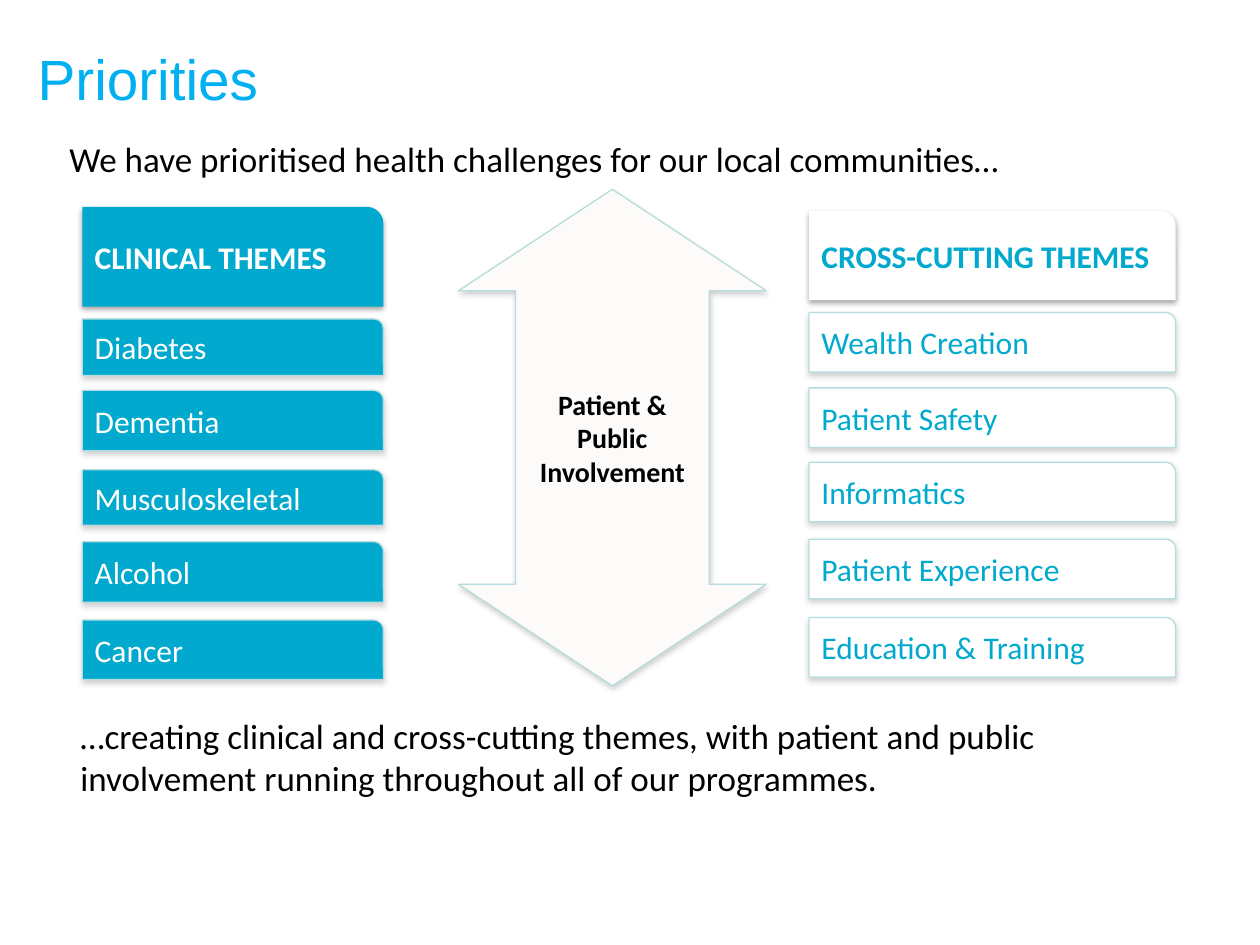
from dataclasses import dataclass

import pptx
import pptx.dml.color
import pptx.enum.shapes
import pptx.enum.text
import pptx.oxml
import pptx.oxml.ns
import pptx.util
from pptx.util import Cm

SHAPES = pptx.enum.shapes.MSO_SHAPE
ALIGN = pptx.enum.text.PP_ALIGN
ANCHOR = pptx.enum.text.MSO_ANCHOR


@dataclass(frozen=True)
class Theme:
    title_color: str = "00B0F0"
    teal: str = "00A9CD"
    white: str = "FFFFFF"
    black: str = "000000"
    arrow_fill: str = "FCFBF9"
    outline: str = "B6DCDF"
    bar_shadow: str = "808080"
    heading_shadow: str = "000000"
    title_font: str = "Arial"
    body_font: str = "Calibri"
    title_size: float = 32.4
    body_size: float = 20
    bar_size: float = 18
    arrow_size: float = 16


@dataclass(frozen=True)
class Bar:
    text: str
    top: float
    height: float


@dataclass(frozen=True)
class Column:
    left: float
    width: float
    fill: str
    color: str
    heading: Bar
    bars: tuple[Bar, ...]


THEME = Theme()

# Bar positions and sizes in centimetres
COLUMNS = (
    Column(1.66, 6.07, THEME.teal, THEME.white,
           Bar("CLINICAL THEMES", 4.17, 2.01),
           (Bar("Diabetes", 6.43, 1.14),
            Bar("Dementia", 7.87, 1.22),
            Bar("Musculoskeletal", 9.47, 1.12),
            Bar("Alcohol", 10.92, 1.22),
            Bar("Cancer", 12.5, 1.2))),
    Column(16.31, 7.39, THEME.white, THEME.teal,
           Bar("CROSS-CUTTING THEMES", 4.25, 1.8),
           (Bar("Wealth Creation", 6.3, 1.2),
            Bar("Patient Safety", 7.82, 1.2),
            Bar("Informatics", 9.32, 1.2),
            Bar("Patient Experience", 10.87, 1.2),
            Bar("Education & Training", 12.45, 1.2))),
)


def rgb(value: str) -> pptx.dml.color.RGBColor:
    return pptx.dml.color.RGBColor.from_string(value)


def write_text(box, text: str, *, size: float, color: str,
               font: str = THEME.body_font, bold: bool = False,
               align=ALIGN.LEFT, anchor=ANCHOR.MIDDLE) -> None:
    frame = box.text_frame
    frame.word_wrap = True
    frame.vertical_anchor = anchor
    para = frame.paragraphs[0]
    para.alignment = align
    span = para.add_run()
    span.text = text
    span.font.name = font
    span.font.size = pptx.util.Pt(size)
    span.font.bold = bold
    span.font.color.rgb = rgb(color)


def add_text(page, left: float, top: float, width: float, height: float,
             text: str, **text_format) -> None:
    box = page.shapes.add_textbox(Cm(left), Cm(top), Cm(width), Cm(height))
    write_text(box, text, **text_format)


def cast_shadow(shape, color: str) -> None:
    shape.shadow.inherit = False
    effects = shape._element.spPr.find(pptx.oxml.ns.qn("a:effectLst"))
    effects.append(pptx.oxml.parse_xml(
        f'<a:outerShdw {pptx.oxml.ns.nsdecls("a")} blurRad="{Cm(0.11)}" '
        f'dist="{Cm(0.06)}" dir="5400000" rotWithShape="0">'
        f'<a:srgbClr val="{color}"><a:alpha val="35000"/></a:srgbClr>'
        '</a:outerShdw>'))


def add_block(page, kind, left: float, top: float, width: float,
              height: float, *, fill: str, shadow: str,
              outline: str | None = None):
    shape = page.shapes.add_shape(kind, Cm(left), Cm(top), Cm(width), Cm(height))
    shape.fill.solid()
    shape.fill.fore_color.rgb = rgb(fill)
    if outline:
        shape.line.color.rgb = rgb(outline)
        shape.line.width = pptx.util.Pt(0.75)
    else:
        shape.line.fill.background()
    cast_shadow(shape, shadow)
    return shape


def add_bar(page, column: Column, bar: Bar, *, heading: bool = False) -> None:
    shape = add_block(
        page, SHAPES.ROUND_1_RECTANGLE, column.left, bar.top, column.width,
        bar.height, fill=column.fill,
        shadow=THEME.heading_shadow if heading else THEME.bar_shadow,
        outline=None if heading else THEME.outline)
    write_text(shape, bar.text, size=THEME.bar_size, color=column.color,
               bold=heading)


def add_column(page, column: Column) -> None:
    for bar in column.bars:
        add_bar(page, column, bar)
    add_bar(page, column, column.heading, heading=True)


def add_involvement_arrow(page) -> None:
    arrow = add_block(page, SHAPES.LEFT_RIGHT_ARROW, 7.34, 5.72, 10.01, 6.2,
                      fill=THEME.arrow_fill, shadow=THEME.bar_shadow,
                      outline=THEME.outline)
    arrow.rotation = 270
    arrow.adjustments[0] = 0.63
    arrow.adjustments[1] = 0.33
    write_text(arrow, "Patient & Public Involvement", size=THEME.arrow_size,
               color=THEME.black, bold=True, align=ALIGN.CENTER)
    # Turn the label back upright
    arrow.text_frame._txBody.bodyPr.set("vert", "vert")


def main() -> None:
    deck = pptx.Presentation()
    deck.slide_width, deck.slide_height = Cm(25.4), Cm(19.05)
    page = deck.slides.add_slide(deck.slide_layouts[6])

    # Title and opening statement
    body = dict(size=THEME.body_size, color=THEME.black, anchor=ANCHOR.TOP)
    add_text(page, 0.51, 0.92, 24.89, 1.32, "Priorities",
             size=THEME.title_size, color=THEME.title_color,
             font=THEME.title_font)
    add_text(page, 1.15, 2.64, 23.29, 1.37,
             "We have prioritised health challenges for our local communities…",
             **body)

    # Theme columns and the arrow between them
    for column in COLUMNS:
        add_column(page, column)
    add_involvement_arrow(page)

    # Closing statement
    add_text(page, 1.37, 14.27, 23.29, 2.13,
             "…creating clinical and cross-cutting themes, with patient and "
             "public involvement running throughout all of our programmes.",
             **body)

    deck.save("out.pptx")


if __name__ == "__main__":
    main()
